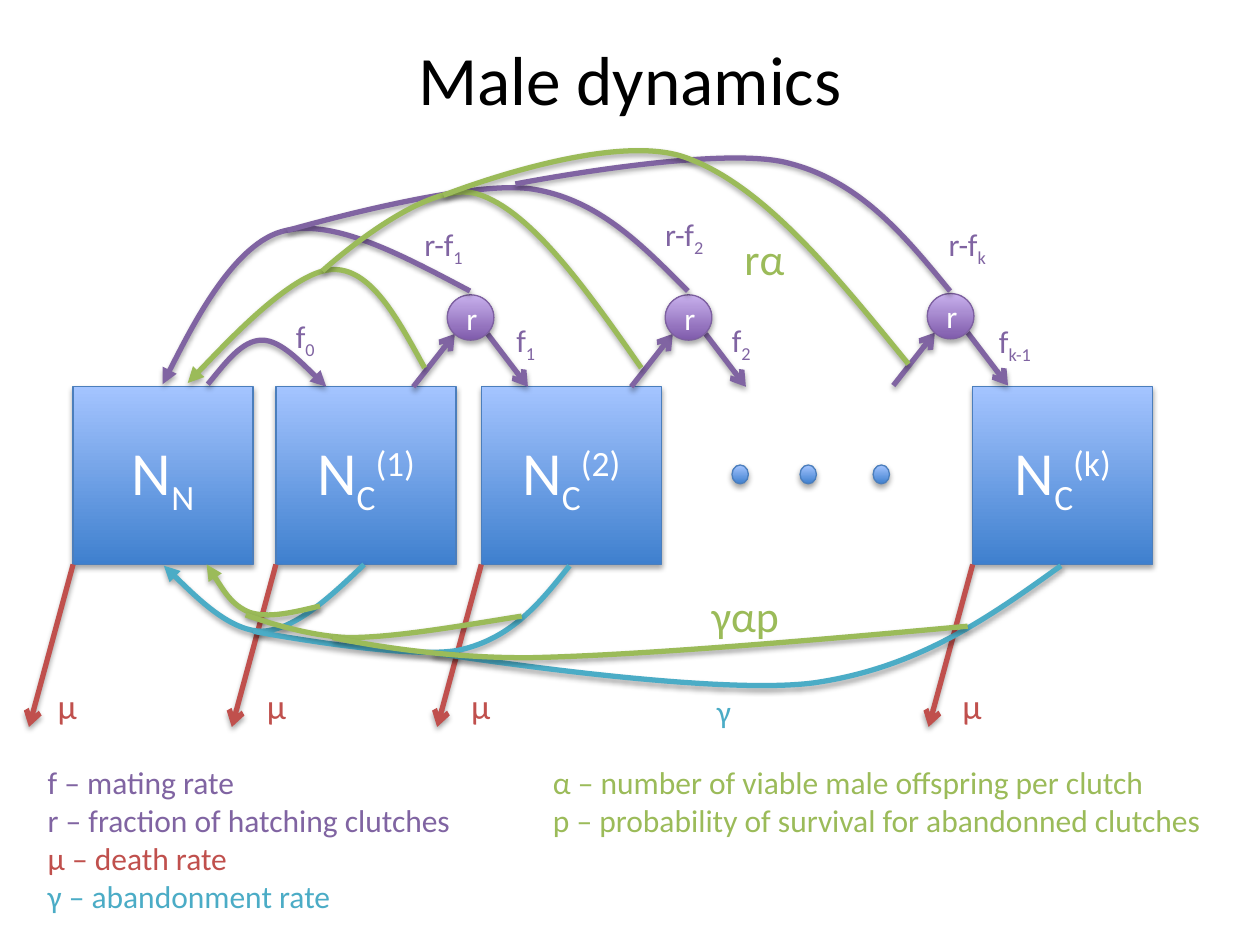
from lxml.etree import SubElement
from pptx import Presentation
from pptx.dml.color import RGBColor
from pptx.enum.shapes import MSO_CONNECTOR, MSO_SHAPE
from pptx.enum.text import MSO_ANCHOR, MSO_AUTO_SIZE, PP_ALIGN
from pptx.oxml.ns import qn
from pptx.util import Inches, Pt

WHITE = RGBColor(0xFF, 0xFF, 0xFF)
BLACK = RGBColor(0x00, 0x00, 0x00)
RED = RGBColor(0xC0, 0x50, 0x4D)
TEAL = RGBColor(0x4B, 0xAC, 0xC6)
PURPLE = RGBColor(0x80, 0x64, 0xA2)
GREEN = RGBColor(0x9B, 0xBB, 0x59)
# Gradient bottom, gradient top, outline
BLUE_FILL = (RGBColor(0x3F, 0x80, 0xCE), RGBColor(0xA4, 0xC4, 0xFF), RGBColor(0x4B, 0x7E, 0xBC))
PURPLE_FILL = (RGBColor(0x7F, 0x5B, 0xAB), RGBColor(0xC8, 0xB0, 0xED), RGBColor(0x7D, 0x60, 0xA0))

COLUMNS, ROWS = 100, 75


class Diagram:
    """Draws on one slide; every length is in grid columns and rows."""

    font_name = "Calibri"
    stroke = Pt(3)
    outline = Pt(0.75)

    def __init__(self, presentation):
        self.slide = presentation.slides.add_slide(presentation.slide_layouts[6])
        self.shapes = self.slide.shapes
        self.column = presentation.slide_width // COLUMNS
        self.row = presentation.slide_height // ROWS

    def point(self, x, y):
        return round(x * self.column), round(y * self.row)

    def box(self, x, y, width, height):
        return *self.point(x, y), *self.point(width, height)

    def shadow(self, shape):
        effects = SubElement(shape.element.spPr, qn("a:effectLst"))
        outer = SubElement(effects, qn("a:outerShdw"), blurRad="40000", dist="23000",
                           dir="5400000", rotWithShape="0")
        black = SubElement(outer, qn("a:srgbClr"), val="000000")
        SubElement(black, qn("a:alpha"), val="35000")

    def stroke_line(self, shape, color, arrowhead):
        shape.line.color.rgb = color
        shape.line.width = self.stroke
        if arrowhead:
            SubElement(shape.element.spPr.find(qn("a:ln")), qn("a:tailEnd"), type=arrowhead)
        self.shadow(shape)

    def fill_paragraph(self, paragraph, text, size, color, sub="", sup=""):
        font = paragraph.font
        font.name, font.size, font.color.rgb = self.font_name, Pt(size), color
        for part, baseline in ((text, 0), (sub, -25000), (sup, 30000)):
            if part:
                run = paragraph.add_run()
                run.text = part
                if baseline:
                    run._r.get_or_add_rPr().set("baseline", str(baseline))

    def node(self, preset, place, colors, text="", size=18, sub="", sup=""):
        shape = self.shapes.add_shape(preset, *self.box(*place))
        bottom, top, edge = colors
        shape.fill.gradient()
        shape.fill.gradient_angle = 90
        for stop, color in zip(shape.fill.gradient_stops, (bottom, top)):
            stop.color.rgb = color
        shape.line.color.rgb = edge
        shape.line.width = self.outline
        self.shadow(shape)
        if text:
            frame = shape.text_frame
            frame.vertical_anchor = MSO_ANCHOR.MIDDLE
            frame.paragraphs[0].alignment = PP_ALIGN.CENTER
            self.fill_paragraph(frame.paragraphs[0], text, size, WHITE, sub, sup)

    def arrow(self, start, end, color):
        line = self.shapes.add_connector(MSO_CONNECTOR.STRAIGHT, *self.point(*start), *self.point(*end))
        self.stroke_line(line, color, "arrow")

    def curve(self, controls, color, arrowhead=None):
        """Draw one or more joined cubic Bezier segments through their control points."""
        knots = [self.point(*control) for control in controls]
        segments = [knots[i:i + 4] for i in range(0, len(knots) - 1, 3)]
        steps = 40
        outline = []
        for a, b, c, d in segments:
            for t in (step / steps for step in range(1, steps + 1)):
                u = 1 - t
                outline.append(tuple(
                    round(u**3 * a[k] + 3 * u * u * t * b[k] + 3 * u * t * t * c[k] + t**3 * d[k])
                    for k in (0, 1)))
        builder = self.shapes.build_freeform(*knots[0])
        builder.add_line_segments(outline, close=False)
        shape = builder.convert_to_shape()
        # The outline fixes the frame; true curves take its place inside it
        track = shape.element.spPr.find(".//" + qn("a:path"))
        for straight in track.findall(qn("a:lnTo")):
            track.remove(straight)
        for segment in segments:
            bezier = SubElement(track, qn("a:cubicBezTo"))
            for x, y in segment[1:]:
                SubElement(bezier, qn("a:pt"), x=str(x - shape.left), y=str(y - shape.top))
        shape.fill.background()
        self.stroke_line(shape, color, arrowhead)

    def text(self, place, lines, size=18, sub=""):
        """Put (text, color) lines in an unwrapped text box."""
        frame = self.shapes.add_textbox(*self.box(*place)).text_frame
        frame.word_wrap = False
        frame.auto_size = MSO_AUTO_SIZE.SHAPE_TO_FIT_TEXT
        for index, (line, color) in enumerate(lines):
            paragraph = frame.add_paragraph() if index else frame.paragraphs[0]
            self.fill_paragraph(paragraph, line, size, color, sub)

    def title(self, place, text):
        frame = self.shapes.add_textbox(*self.box(*place)).text_frame
        frame.word_wrap = True
        frame.vertical_anchor = MSO_ANCHOR.MIDDLE
        frame.paragraphs[0].alignment = PP_ALIGN.CENTER
        self.fill_paragraph(frame.paragraphs[0], text, 39.6, BLACK)


def draw_states(diagram):
    top, width, height = 30.7, 14.3, 14.1
    bottom = top + height
    states = ((5.8, 3.6, "N", ""), (21.9, 20.2, "C", "(1)"),
              (38.2, 36.4, "C", "(2)"), (77.2, 75.4, "C", "(k)"))
    for left, _, sub, sup in states:
        diagram.node(MSO_SHAPE.RECTANGLE, (left, top, width, height), BLUE_FILL, "N", 35, sub, sup)
    for left in (58.1, 63.5, 69.3):
        diagram.node(MSO_SHAPE.OVAL, (left, 36.9, 1.3, 1.5), BLUE_FILL)
    for left, label_left, _, _ in states:
        diagram.arrow((left, bottom), (left - 3.5, 57.7), RED)
        diagram.text((label_left, 53.8, 3.6, 4.4), [("μ", RED)], 20)


def draw_abandonment(diagram):
    diagram.curve([(28.9, 44.8), (26.2, 47.4), (23.4, 50), (20.8, 50.1),
                   (18.1, 50.1), (13, 44.9), (13, 44.9)], TEAL, "triangle")
    diagram.curve([(45.2, 44.9), (42.9, 47.8), (40.6, 50.7), (36.4, 51.6),
                   (32.2, 52.4), (20.1, 50.1), (20.1, 50.1)], TEAL)
    diagram.curve([(84.2, 44.9), (78.5, 49), (72.9, 53), (64.6, 54.2),
                   (56.2, 55.3), (34.3, 51.8), (34.3, 51.8)], TEAL)
    diagram.text((55.9, 54.4, 3.1, 4), [("γ", TEAL)])


def draw_mating(diagram):
    diagram.curve([(16.5, 30.5), (17.9, 28.8), (19.2, 27), (20.8, 27),
                   (22.3, 27), (25.9, 30.7), (25.9, 30.7)], PURPLE, "triangle")
    for left, top in ((35.5, 23.4), (52.8, 23.4), (73.6, 23.3)):
        base, rim = top + 7.3, top + 3.1
        diagram.arrow((left - 2.7, base), (left + 0.6, rim), PURPLE)
        diagram.arrow((left + 3.2, rim), (left + 6.4, base), PURPLE)
        diagram.node(MSO_SHAPE.OVAL, (left, top, 3.7, 3.6), PURPLE_FILL, "r")
    for left, top, width, sub in ((22.5, 24.7, 3.6, "0"), (40, 25, 3.6, "1"),
                                  (57.1, 25, 3.6, "2"), (78.3, 25.1, 5, "k-1")):
        diagram.text((left, top, width, 4), [("f", PURPLE)], sub=sub)


def draw_returns(diagram):
    diagram.curve([(37.3, 23.1), (31.8, 20.2), (26.3, 17.2), (22.3, 18.4),
                   (18.2, 19.6), (12.9, 30.5), (12.9, 30.5)], PURPLE, "triangle")
    diagram.curve([(54.6, 23.1), (51, 19.5), (47.5, 15.8), (42.2, 15),
                   (36.9, 14.2), (22.8, 18.3), (22.8, 18.3)], PURPLE)
    diagram.curve([(75.4, 23.1), (71.8, 18.7), (68.2, 14.3), (62.4, 12.9),
                   (56.7, 11.5), (40.9, 14.6), (40.9, 14.6)], PURPLE)
    for left, top, sub in ((32.7, 17.4, "1"), (51.8, 16.6, "2"), (74.3, 17.4, "k")):
        diagram.text((left, top, 5.3, 4), [("r-f", PURPLE)], sub=sub)


def draw_offspring(diagram):
    diagram.curve([(33.7, 29.2), (31.5, 25.2), (29.4, 21.2), (26.3, 21.4),
                   (23.1, 21.6), (14.9, 30.4), (14.9, 30.4)], GREEN, "triangle")
    diagram.curve([(50.9, 29.2), (46.5, 22.9), (42.1, 16.7), (37.9, 15.4),
                   (33.7, 14.1), (25.6, 21.5), (25.6, 21.5)], GREEN)
    diagram.curve([(72.1, 28.9), (66.3, 21.8), (60.6, 14.7), (54.4, 12.5),
                   (48.3, 10.3), (35.2, 15.5), (35.2, 15.5)], GREEN)
    diagram.text((58.1, 17.9, 5.2, 5.2), [("rα", GREEN)], 25)
    diagram.curve([(25.4, 48.1), (23.3, 48.6), (21.3, 49.1), (19.8, 48.6),
                   (18.3, 48), (16.4, 44.8), (16.4, 44.8)], GREEN, "triangle")
    diagram.curve([(41.4, 48.9), (36.4, 49.7), (31.3, 50.6), (27.7, 50.6),
                   (24, 50.5), (19.5, 48.8), (19.5, 48.8)], GREEN)
    diagram.curve([(76.8, 49.7), (63.8, 50.9), (50.7, 52), (42.3, 52.2),
                   (33.9, 52.3), (26.4, 50.6), (26.4, 50.6)], GREEN)
    diagram.text((55.5, 46.2, 7.6, 5.2), [("γαp", GREEN)], 25)


def draw_legend(diagram):
    diagram.text((2.8, 60.1, 34.4, 13.1), [
        ("f – mating rate", PURPLE), ("r – fraction of hatching clutches", PURPLE),
        ("μ – death rate", RED), ("γ – abandonment rate", TEAL)])
    diagram.text((42.9, 60.1, 54.1, 7.1), [
        ("α – number of viable male offspring per clutch", GREEN),
        ("p – probability of survival for abandonned clutches", GREEN)])


def main():
    presentation = Presentation()
    presentation.slide_width, presentation.slide_height = Inches(10), Inches(7.5)
    diagram = Diagram(presentation)
    draw_states(diagram)
    draw_abandonment(diagram)
    draw_mating(diagram)
    draw_returns(diagram)
    diagram.title((5, 3, 90, 6.3), "Male dynamics")
    draw_offspring(diagram)
    draw_legend(diagram)
    presentation.save("out.pptx")


if __name__ == "__main__":
    main()
